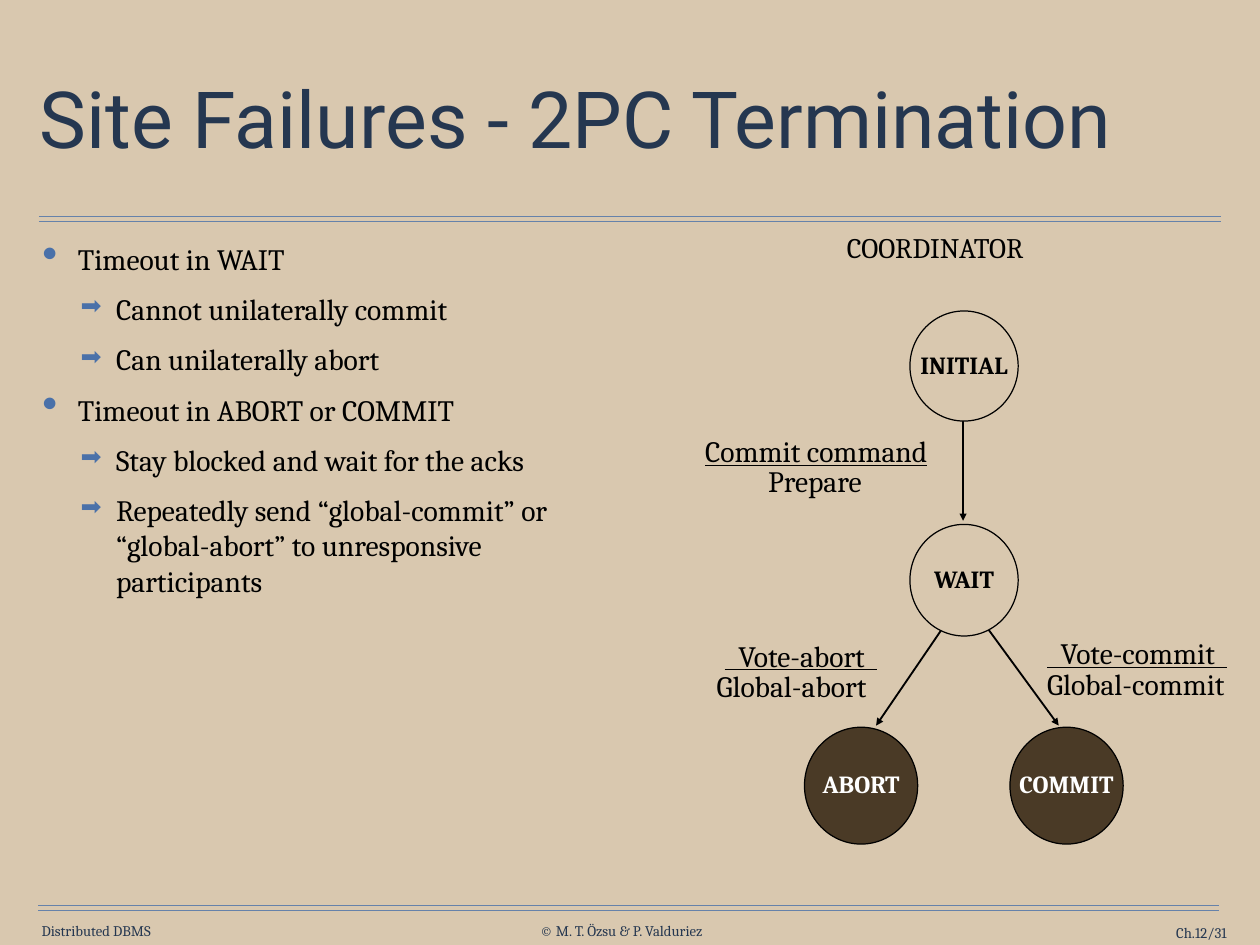
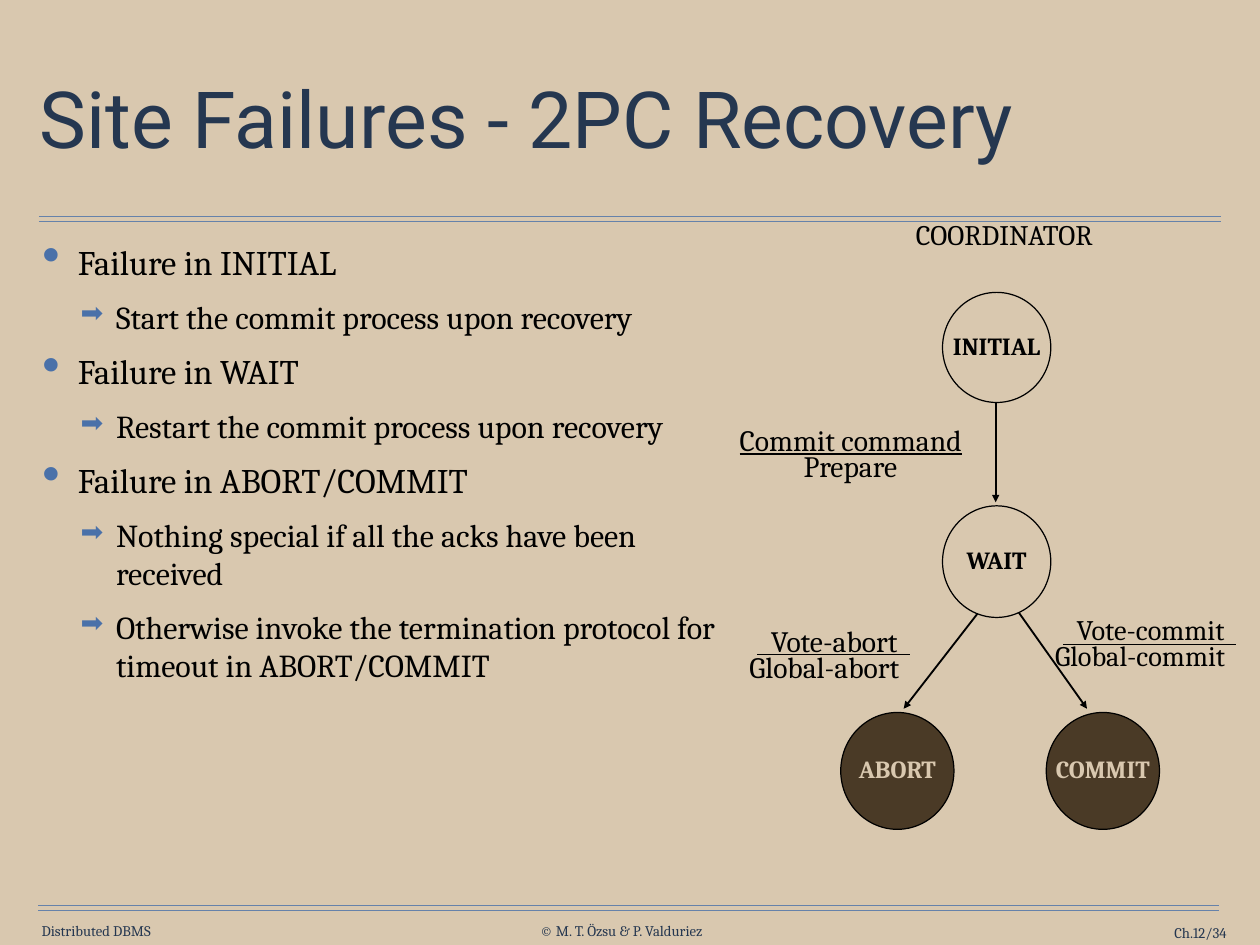
from lxml import etree
from pptx import Presentation
from pptx.dml.color import RGBColor
from pptx.enum import shapes, text
from pptx.oxml import ns
from pptx.util import Pt

SAND = RGBColor(0xD9, 0xC8, 0xAF)
NAVY = RGBColor(0x25, 0x37, 0x50)
RULE_BLUE = RGBColor(0x66, 0x82, 0xAA)
BULLET_BLUE = RGBColor(0x4A, 0x71, 0xA9)
BROWN = RGBColor(0x4A, 0x3A, 0x26)
BLACK = RGBColor(0, 0, 0)
WHITE = RGBColor(0xFF, 0xFF, 0xFF)

BODY_FONT = "Cambria"
TITLE_FONT = "Roboto"
LEFT = text.PP_ALIGN.LEFT
CENTER = text.PP_ALIGN.CENTER
RIGHT = text.PP_ALIGN.RIGHT
MIDDLE = text.MSO_ANCHOR.MIDDLE
TOP = text.MSO_ANCHOR.TOP

BULLETS = (("•", 150, 28.8), ("➡", 85, 59.8))
HANGING = 28.8
LABEL_INSETS = (10, 5, 10, 5)
BAR_DROP = 31
VOTE_INDENT = 11


def write(para, content, size=24, color=BLACK, font=BODY_FONT, bold=False,
          underline=False, align=LEFT):
    para.alignment = align
    span = para.add_run()
    span.text = content
    span.font.name = font
    span.font.size = Pt(size)
    span.font.color.rgb = color
    span.font.bold = bold
    span.font.underline = underline


def set_frame(frame, insets=(0, 0, 0, 0), anchor=TOP, wrap=True):
    frame.margin_left, frame.margin_top, frame.margin_right, frame.margin_bottom = map(Pt, insets)
    frame.vertical_anchor = anchor
    frame.word_wrap = wrap
    frame.auto_size = text.MSO_AUTO_SIZE.NONE
    return frame


def add_text(slide, content, left, top, width, height, insets=(0, 0, 0, 0),
             anchor=TOP, **style):
    box = slide.shapes.add_textbox(Pt(left), Pt(top), Pt(width), Pt(height))
    frame = set_frame(box.text_frame, insets, anchor)
    write(frame.paragraphs[0], content, **style)


def add_line(slide, start, end, color=BLACK, width=1, arrow=False):
    line = slide.shapes.add_connector(
        shapes.MSO_CONNECTOR.STRAIGHT, *map(Pt, (*start, *end)))
    line.line.color.rgb = color
    line.line.width = Pt(width)
    if arrow:
        etree.SubElement(line.line._get_or_add_ln(), ns.qn("a:tailEnd"), type="triangle")
    etree.SubElement(line._element.spPr, ns.qn("a:effectLst"))


def add_bullet(para, level):
    symbol, percent, indent = BULLETS[level]
    para.level = level
    props = para._p.get_or_add_pPr()
    props.set("marL", str(Pt(indent)))
    props.set("indent", str(-Pt(HANGING)))
    color = etree.SubElement(props, ns.qn("a:buClr"))
    etree.SubElement(color, ns.qn("a:srgbClr"), val=str(BULLET_BLUE))
    etree.SubElement(props, ns.qn("a:buSzPct"), val=str(percent * 1000))
    etree.SubElement(props, ns.qn("a:buChar"), char=symbol)


def add_body(slide, items, width, sizes):
    box = slide.shapes.add_textbox(Pt(30.2), Pt(191.5), Pt(width), Pt(533))
    frame = set_frame(box.text_frame, (4.3,) * 4)
    for index, (level, content) in enumerate(items):
        para = frame.add_paragraph() if index else frame.paragraphs[0]
        if index:
            para.space_before = Pt(12)
        add_bullet(para, level)
        write(para, content, size=sizes[level])


def add_state(slide, name, left, top, width, height, fill=SAND, color=BLACK):
    state = slide.shapes.add_shape(
        shapes.MSO_SHAPE.OVAL, *map(Pt, (left, top, width, height)))
    state.shadow.inherit = False
    state.fill.solid()
    state.fill.fore_color.rgb = fill
    state.line.color.rgb = BLACK
    state.line.width = Pt(1)
    frame = set_frame(state.text_frame, (0, 0, 0, 3), MIDDLE, wrap=False)
    write(frame.paragraphs[0], name, size=20, color=color, bold=True, align=CENTER)


def add_label(slide, content, left, top, width, **style):
    add_text(slide, content, left, top, width, 38.5, insets=LABEL_INSETS, **style)


def add_vote(slide, vote, outcome, vote_at, outcome_at, bar, size=24):
    left, top = vote_at
    add_label(slide, vote, left + VOTE_INDENT, top, 160, size=size)
    bar_left, bar_y = left + LABEL_INSETS[0], top + BAR_DROP
    add_line(slide, (bar_left, bar_y), (bar_left + bar, bar_y))
    add_label(slide, outcome, *outcome_at, 176, size=size)


def add_diagram(slide, start, final, final_color, heading, command, prepare, arrows):
    left, top = start
    add_label(slide, "COORDINATOR", *heading, 198, size=23)
    add_line(slide, (left + 43.2, top + 89.5), (left + 43.2, top + 170.6),
             width=1.5, arrow=True)
    for begin, end in arrows:
        add_line(slide, begin, end, width=1.5, arrow=True)
    add_state(slide, "INITIAL", left, top, 88, 89.5)
    add_state(slide, "WAIT", left, top + 173.5, 88, 90.7)
    for index, name in enumerate(("ABORT", "COMMIT")):
        add_state(slide, name, final[0] + 167 * index, final[1], 92, 95,
                  fill=BROWN, color=final_color)
    add_label(slide, "Commit command", *command, 222.5, underline=True)
    add_label(slide, "Prepare", *prepare, 106.6)


def add_page(deck, title, number):
    slide = deck.slides.add_slide(deck.slide_layouts[5])
    for left, right, y in ((31.7, 992, 175.7), (31, 991, 735.8)):
        for offset in (0, 4.3):
            add_line(slide, (left, y + offset), (right, y + offset), color=RULE_BLUE)
    for content, left, top, width, align in (
            ("Distributed DBMS", 33.8, 749.5, 99, LEFT),
            ("© M. T. Özsu & P. Valduriez", 439, 749.5, 150, LEFT),
            (f"Ch.12/{number}", 886, 751, 111, RIGHT)):
        add_text(slide, content, left, top, width, 14.4, anchor=MIDDLE,
                 size=12, color=NAVY, align=align)
    heading = slide.shapes.title
    heading.left, heading.top, heading.width, heading.height = map(Pt, (28, 35.3, 968, 126.7))
    para = set_frame(heading.text_frame, (4.3,) * 4, MIDDLE).paragraphs[0]
    para.line_spacing = 0.97
    write(para, title, size=64, color=NAVY, font=TITLE_FONT)
    return slide


def add_termination(deck):
    slide = add_page(deck, "Site Failures - 2PC Termination", 31)
    add_body(slide, (
        (0, "Timeout in WAIT"),
        (1, "Cannot unilaterally commit"),
        (1, "Can unilaterally abort"),
        (0, "Timeout in ABORT or COMMIT"),
        (1, "Stay blocked and wait for the acks"),
        (1, "Repeatedly send “global-commit” or “global-abort” to unresponsive participants"),
    ), width=459.4, sizes=(24, 24))
    add_diagram(slide, (739.5, 252.7), (653.8, 591), WHITE,
                heading=(678.2, 182.2), command=(563, 347), prepare=(614.2, 371.5),
                arrows=(((764.6, 512.6), (712, 589.7)), ((801.4, 509), (860.4, 589.7))))
    add_vote(slide, "Vote-abort", "Global-abort", (579, 513.4), (572.4, 537.8), bar=124)
    add_vote(slide, "Vote-commit", "Global-commit", (841, 511.2), (841, 536.4), bar=146)


def add_recovery(deck):
    slide = add_page(deck, "Site Failures - 2PC Recovery", 34)
    add_body(slide, (
        (0, "Failure in INITIAL"),
        (1, "Start the commit process upon recovery"),
        (0, "Failure in WAIT"),
        (1, "Restart the commit process upon recovery"),
        (0, "Failure in ABORT/COMMIT"),
        (1, "Nothing special if all the acks have been received"),
        (1, "Otherwise invoke the termination protocol for timeout in ABORT/COMMIT"),
    ), width=555.8, sizes=(28, 26))
    add_diagram(slide, (766, 237.6), (683.3, 579), SAND,
                heading=(734.4, 171.4), command=(591, 337.7), prepare=(643, 359.3),
                arrows=(((794.2, 499), (734.4, 576)), ((823.7, 491.8), (883.4, 576))))
    add_vote(slide, "Vote-abort", "Global-abort", (605.5, 501), (599, 522.7), bar=124)
    add_vote(slide, "Vote-commit", "Global-commit", (854, 492.5), (847.4, 514),
             bar=140.5, size=23)


def main():
    deck = Presentation()
    deck.slide_width, deck.slide_height = Pt(1024), Pt(768)
    backdrop = deck.slide_master.background.fill
    backdrop.solid()
    backdrop.fore_color.rgb = SAND
    add_termination(deck)
    add_recovery(deck)
    deck.save("out.pptx")


if __name__ == "__main__":
    main()
